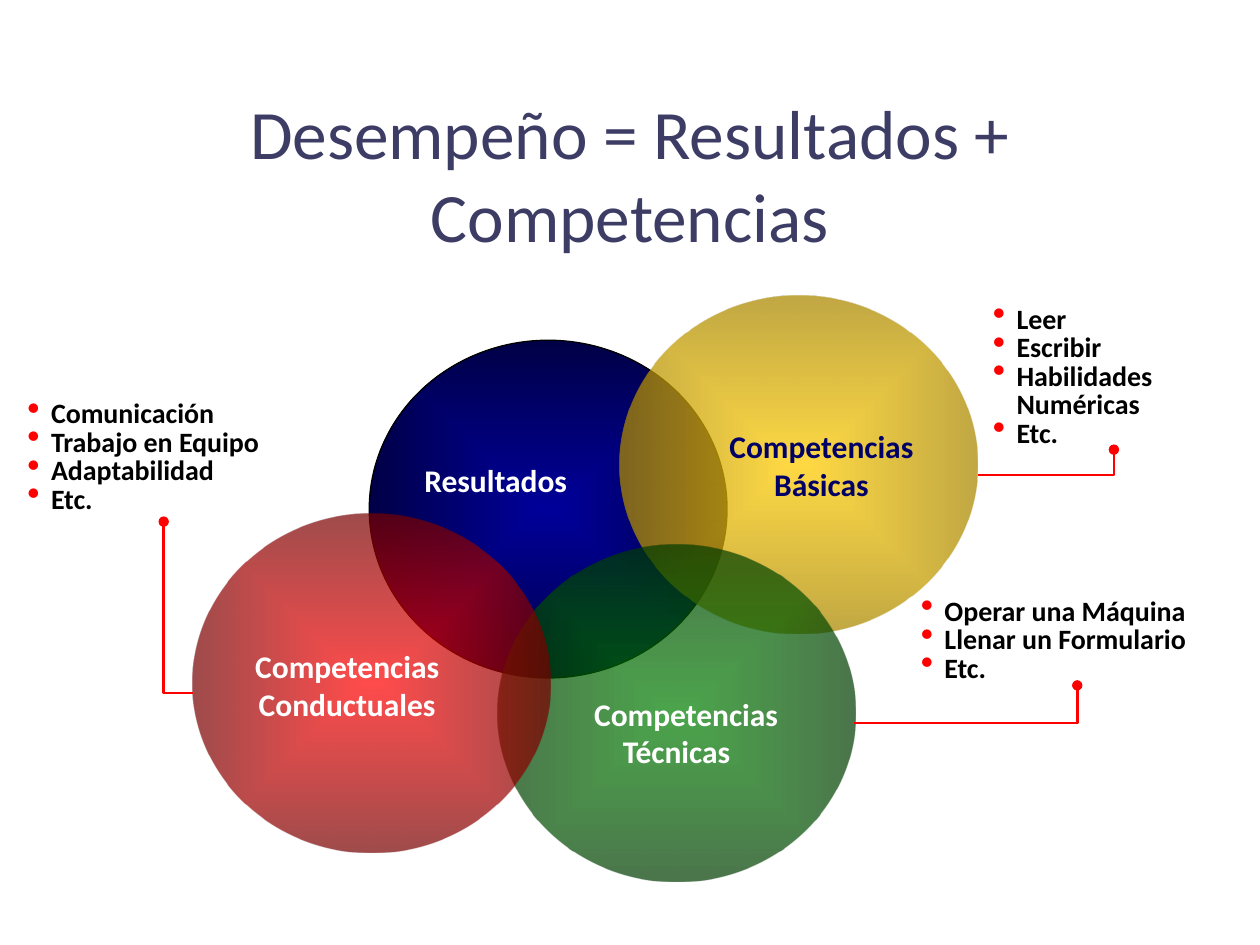
from dataclasses import dataclass
from lxml import etree
from pptx import Presentation
from pptx.dml.color import RGBColor as RGB
from pptx.enum.shapes import MSO_CONNECTOR as Link, MSO_SHAPE as Form
from pptx.enum.text import MSO_ANCHOR as Anchor, PP_ALIGN as Align
from pptx.oxml import parse_xml
from pptx.oxml.ns import qn
from pptx.util import Pt


@dataclass(frozen=True)
class Theme:
    font: str = "Calibri"
    title: str = "3C3C65"
    navy: str = "000066"
    white: str = "FFFFFF"
    black: str = "000000"
    red: str = "FF0000"
    big: float = 39.6
    mid: float = 18
    small: float = 16
    wide: float = 204.5
    high: float = 193
    hang: float = 13.5


T = Theme()
NS = 'xmlns:a="http://schemas.openxmlformats.org/drawingml/2006/main"'


def style(par, size, color, bold=True):
    for run in par.runs:
        font = run.font
        font.name, font.size, font.bold = T.font, Pt(size), bold
        font.color.rgb = RGB.from_string(color)


def inset(frame, left, top, right, bottom):
    frame.margin_left, frame.margin_top = Pt(left), Pt(top)
    frame.margin_right, frame.margin_bottom = Pt(right), Pt(bottom)


def add_text(slide, box, text, size, color, bold=True, wrap=True):
    shape = slide.shapes.add_textbox(*map(Pt, box))
    frame = shape.text_frame
    frame.word_wrap = wrap
    frame.text = text
    for par in frame.paragraphs:
        style(par, size, color, bold)
    return frame


def shade(shape, inner, outer, alpha):
    """Fill from the centre outwards, following the shape."""
    stops = "".join(
        f'<a:gs pos="{pos}"><a:srgbClr val="{color}">'
        f'<a:alpha val="{alpha * 1000}"/></a:srgbClr></a:gs>'
        for pos, color in ((0, inner), (100000, outer)))
    grad = parse_xml(
        f'<a:gradFill {NS} rotWithShape="1"><a:gsLst>{stops}</a:gsLst>'
        '<a:path path="shape"><a:fillToRect l="50000" t="50000" '
        'r="50000" b="50000"/></a:path></a:gradFill>')
    shape._element.spPr.find(qn("a:prstGeom")).addnext(grad)


def add_disc(slide, left, top, inner, outer, alpha=100):
    shape = slide.shapes.add_shape(
        Form.OVAL, Pt(left), Pt(top), Pt(T.wide), Pt(T.high))
    shape.shadow.inherit = False
    shade(shape, inner, outer, alpha)
    shape.line.fill.background()
    return shape


def label(disc, text, color, pad):
    frame = disc.text_frame
    frame.word_wrap = False
    frame.vertical_anchor = Anchor.MIDDLE
    inset(frame, *pad)
    frame.text = text
    for par in frame.paragraphs:
        par.alignment = Align.CENTER
        style(par, T.mid, color)
    return frame


def add_list(slide, box, items, pad=(7.2, 3.6, 7.2, 3.6)):
    frame = add_text(slide, box, "\n".join(items), T.small, T.black)
    inset(frame, *pad)
    for par in frame.paragraphs:
        par.line_spacing = 0.85
        props = par._p.get_or_add_pPr()
        props.set("marL", str(Pt(T.hang)))
        props.set("indent", str(-Pt(T.hang)))
        color = etree.SubElement(props, qn("a:buClr"))
        etree.SubElement(color, qn("a:srgbClr"), val=T.red)
        etree.SubElement(props, qn("a:buSzPct"), val="130000")
        etree.SubElement(props, qn("a:buChar"), char="•")


def add_link(slide, start, end):
    """Run level from a disc, then up to a dot below its list."""
    link = slide.shapes.add_connector(Link.ELBOW, *map(Pt, start + end))
    link.line.color.rgb = RGB.from_string(T.red)
    link.line.width = Pt(1.5)
    props = link._element.spPr
    props.find(qn("a:prstGeom")).set("prst", "bentConnector2")
    etree.SubElement(props.find(qn("a:ln")), qn("a:tailEnd"), type="oval")
    etree.SubElement(props, qn("a:effectLst"))


def main():
    deck = Presentation()
    deck.slide_width, deck.slide_height = Pt(720), Pt(540)
    slide = deck.slides.add_slide(deck.slide_layouts[6])

    # Overlapping discs
    base = add_disc(slide, 211, 194.4, "000099", "000047")
    base.line.color.rgb = RGB.from_string(T.black)
    base.line.width = Pt(0.75)
    basic = add_disc(slide, 354.2, 169.2, "FFCC00", "AA8800", 73)
    label(basic, "Competencias\nBásicas", T.navy, (26, 0, 0, 0))
    tech = add_disc(slide, 284.4, 311, "008000", "003B00", 70)
    frame = label(tech, "Competencias\nTécnicas", T.white, (0, 22, 0, 0))
    frame.paragraphs[0]._p.get_or_add_pPr().set("marL", str(Pt(11)))
    soft = add_disc(slide, 110.2, 293.8, "FF0000", "760000", 70)
    label(soft, "Competencias\nConductuales", T.white, (0, 2, 28, 0))
    add_text(slide, (235.4, 260, 111.6, 28.8), "Resultados",
             T.mid, T.white, wrap=False)

    # Lists and their links
    add_list(slide, (567.4, 175, 139, 82),
             ["Leer", "Escribir", "Habilidades Numéricas", "Etc."],
             (0, 0, 0, 0))
    add_link(slide, (558.7, 271.4), (636.5, 257))
    add_list(slide, (8.6, 225.4, 170, 72.7),
             ["Comunicación", "Trabajo en Equipo", "Adaptabilidad", "Etc."])
    add_link(slide, (110.2, 396), (93.6, 298.1))
    add_list(slide, (519.1, 338.4, 193, 53.3),
             ["Operar una Máquina", "Llenar un Formulario", "Etc."],
             (7.2, 3.6, 7.2, 0))
    add_link(slide, (488.2, 413.3), (615.6, 391.7))

    # Title
    frame = add_text(slide, (36, 72, 648, 54),
                     "Desempeño = Resultados + Competencias",
                     T.big, T.title, bold=False)
    frame.vertical_anchor = Anchor.MIDDLE
    frame.paragraphs[0].alignment = Align.CENTER

    deck.save("out.pptx")


if __name__ == "__main__":
    main()
